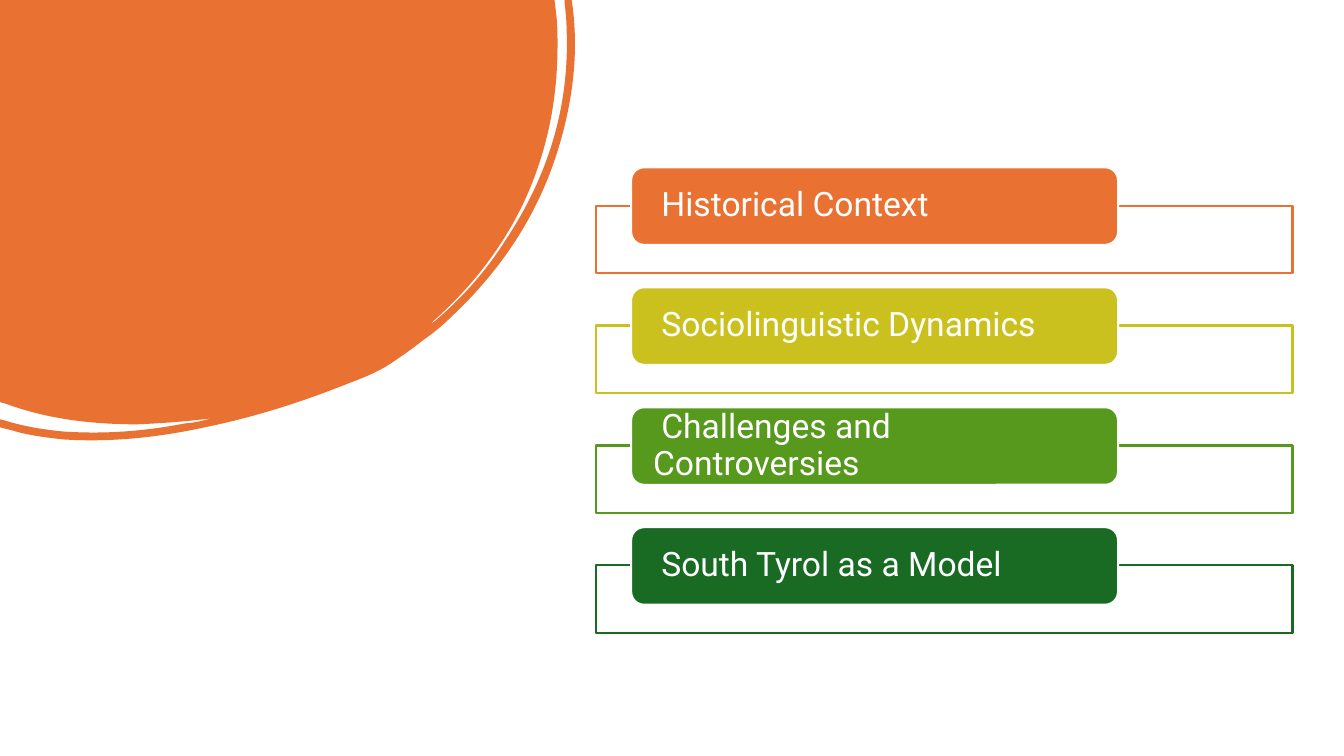
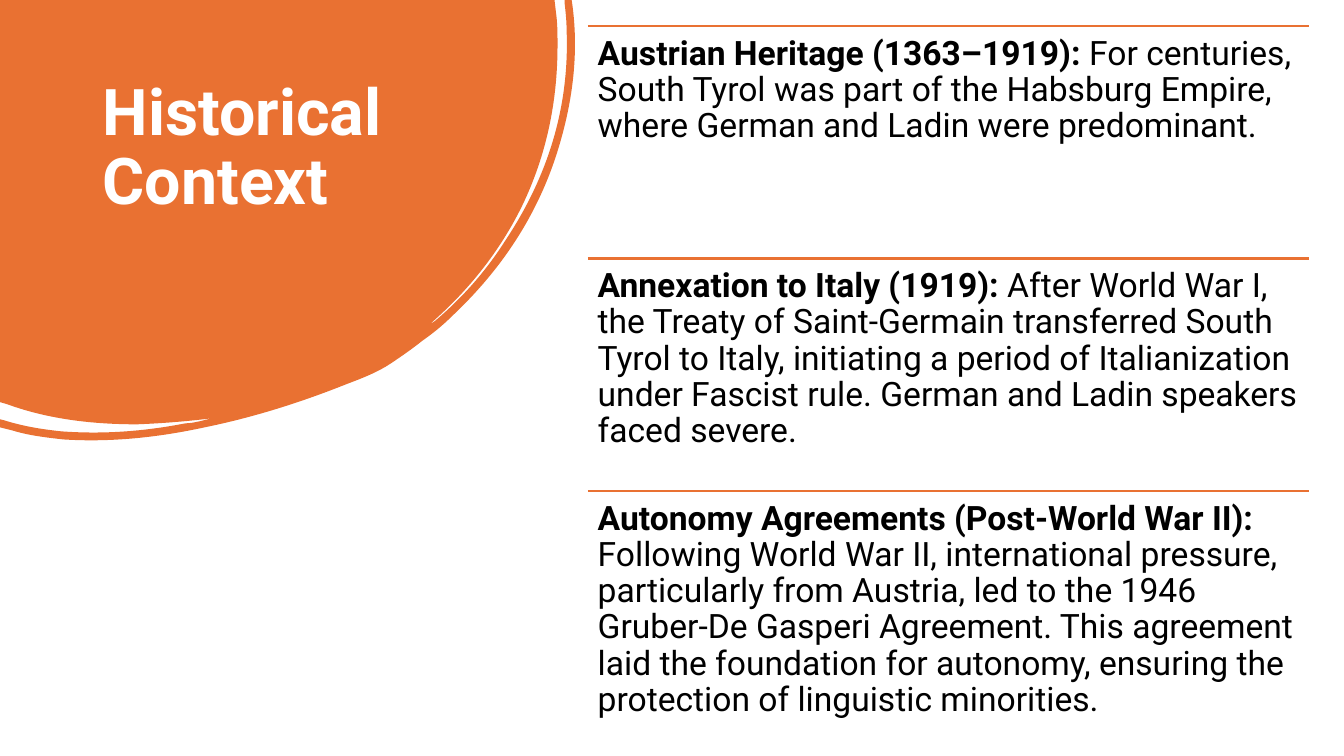
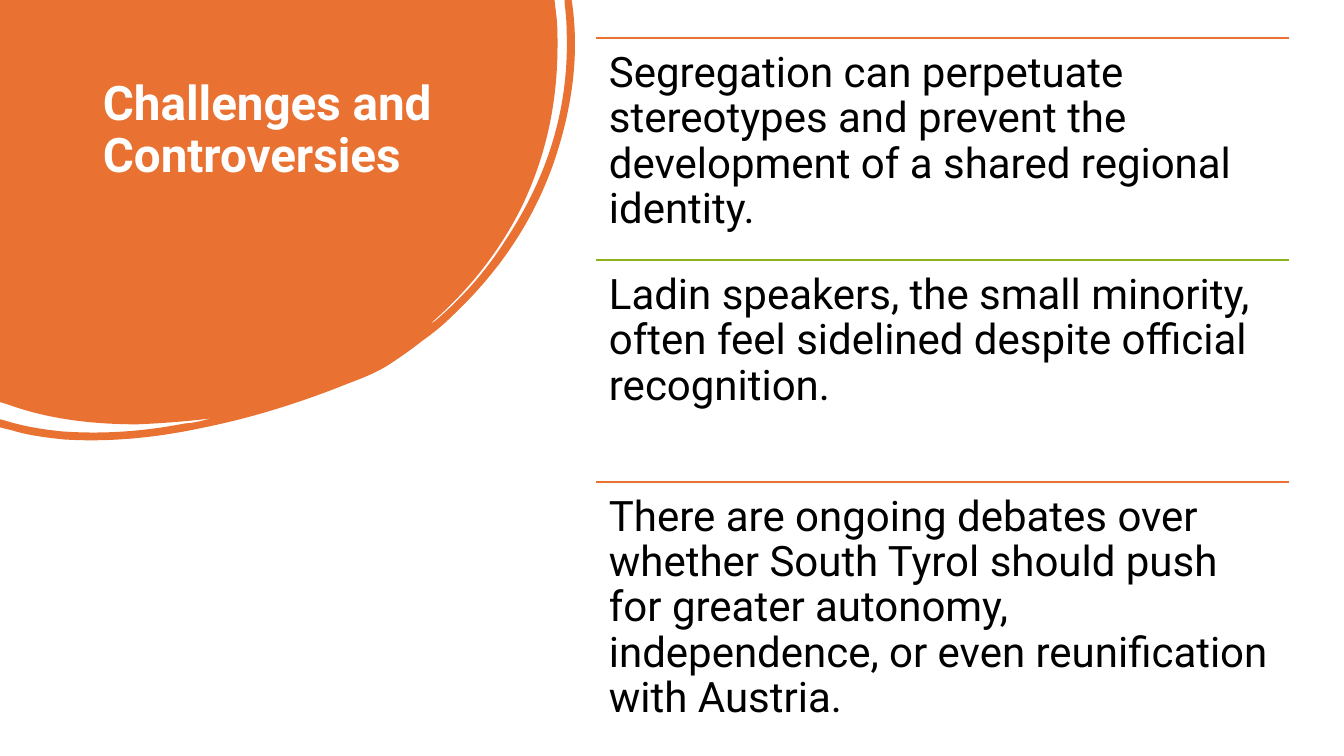
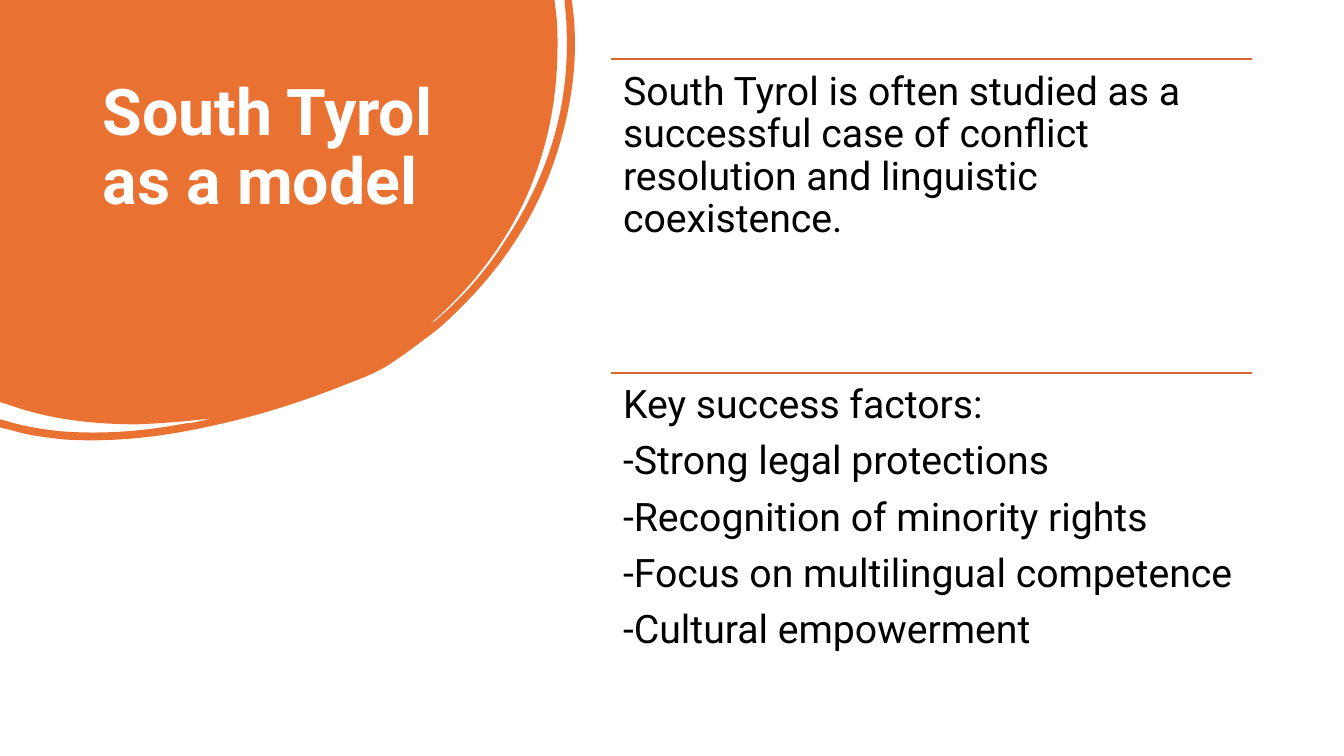
from lxml.etree import SubElement
from pptx import Presentation
from pptx.dml.color import RGBColor
from pptx.enum.shapes import MSO_CONNECTOR, MSO_SHAPE
from pptx.enum.text import MSO_ANCHOR, MSO_AUTO_SIZE, PP_ALIGN
from pptx.oxml.ns import qn
from pptx.util import Inches, Pt

COLORS = {
    "orange": "E97132",
    "yellow": "CBC11E",
    "lime": "8EB21E",
    "green": "56991D",
    "forest": "196B24",
    "rust": "D3672D",
    "white": "FFFFFF",
    "black": "000000",
}
FONT = "Roboto"
RULE_WIDTH = Pt(1.5)
TITLE_ONLY, BLANK = 5, 6

BLOB_WIDTH, BLOB_HEIGHT = Inches(5.71), Inches(4.37)
BLOB_OUTLINE = [
    (5.5, 0), (5.52, 0.17),
    (5.53, 0.26, 5.53, 0.36, 5.53, 0.45), (5.53, 1.01, 5.42, 1.54, 5.18, 2.04),
    (4.96, 2.49, 4.65, 2.88, 4.27, 3.21), (4.29, 3.21, 4.3, 3.19, 4.32, 3.18),
    (4.59, 2.95, 4.82, 2.69, 5.01, 2.39), (5.43, 1.76, 5.65, 1.07, 5.62, 0.3),
    (5.62, 0.21, 5.61, 0.12, 5.6, 0.03), (5.6, 0), (5.67, 0), (5.68, 0.07),
    (5.74, 0.54, 5.68, 1.02, 5.53, 1.5), (5.33, 2.14, 4.97, 2.68, 4.48, 3.14),
    (4.39, 3.23, 4.29, 3.31, 4.19, 3.38), (4.09, 3.46, 3.99, 3.53, 3.87, 3.61),
    (3.75, 3.69, 3.6, 3.75, 3.44, 3.81), (2.99, 3.99, 2.52, 4.14, 2.03, 4.24),
    (1.57, 4.34, 1.1, 4.39, 0.63, 4.36), (0.45, 4.34, 0.28, 4.32, 0.12, 4.27),
    (0, 4.24), (0, 4.16), (0.04, 4.17),
    (0.23, 4.23, 0.42, 4.26, 0.61, 4.28), (1.03, 4.31, 1.43, 4.28, 1.84, 4.2),
    (1.89, 4.2, 1.93, 4.19, 1.98, 4.18), (2.02, 4.17, 2.06, 4.16, 2.1, 4.15),
    (1.86, 4.18, 1.61, 4.2, 1.36, 4.21), (0.92, 4.21, 0.48, 4.16, 0.07, 4.01),
    (0, 3.99),
]

TOPICS = [
    (" Historical Context", "orange"),
    (" Sociolinguistic Dynamics", "yellow"),
    (" Challenges and Controversies", "green"),
    (" South Tyrol as a Model", "forest"),
]

SECTIONS = [
    {
        "title": "Historical Context", "title_size": 46, "size": 24,
        "left": 5.83, "top": 0.26, "last_top": 4.87, "width": 7.15, "inset": 0.1,
        "rules": ["orange", "orange", "orange"],
        "entries": [
            [[("Austrian Heritage (1363–1919):", True),
              (" For centuries, South Tyrol was part of the Habsburg Empire, where German "
               "and Ladin were predominant.", False)]],
            [[("Annexation to Italy (1919):", True),
              (" After World War I, the Treaty of Saint-Germain transferred South Tyrol to "
               "Italy, initiating a period of Italianization under Fascist rule. German and "
               "Ladin speakers faced severe.", False)]],
            [[("Autonomy Agreements (Post-World War II):", True),
              (" Following World War II, international pressure, particularly from Austria, "
               "led to the 1946 Gruber-De Gasperi Agreement. This agreement laid the "
               "foundation for autonomy, ensuring the protection of linguistic minorities.",
               False)]],
        ],
    },
    {
        "title": "Challenges and Controversies", "title_size": 34, "size": 30,
        "left": 5.91, "top": 0.38, "last_top": 4.78, "width": 6.87, "inset": 0.13,
        "rules": ["orange", "lime", "orange"],
        "entries": [
            ["Segregation can perpetuate stereotypes and prevent the development of a shared "
             "regional identity."],
            ["Ladin speakers, the small minority, often feel sidelined despite official "
             "recognition."],
            ["There are ongoing debates over whether South Tyrol should push for greater "
             "autonomy, independence, or even reunification with Austria."],
        ],
    },
    {
        "title": "South Tyrol as a model", "title_size": 46, "size": 28,
        "left": 6.06, "top": 0.59, "last_top": 3.7, "width": 6.36, "inset": 0.12,
        "rules": ["rust", "rust"],
        "entries": [
            ["South Tyrol is often studied as a successful case of conflict resolution and "
             "linguistic coexistence."],
            ["Key success factors:", "-Strong legal protections",
             "-Recognition of minority rights", "-Focus on multilingual competence",
             "-Cultural empowerment"],
        ],
    },
]


def rgb(name):
    return RGBColor.from_string(COLORS[name])


def write(frame, paragraphs, size, color="black", bold=False, anchor=MSO_ANCHOR.TOP,
          insets=(0.1, 0.05), space_after=0):
    frame.word_wrap = True
    frame.auto_size = MSO_AUTO_SIZE.NONE
    frame.vertical_anchor = anchor
    frame.margin_left = frame.margin_right = Inches(insets[0])
    frame.margin_top = frame.margin_bottom = Inches(insets[1])
    for number, content in enumerate(paragraphs):
        paragraph = frame.add_paragraph() if number else frame.paragraphs[0]
        paragraph.alignment = PP_ALIGN.LEFT
        paragraph.line_spacing = 0.9
        paragraph.space_before = Pt(0)
        paragraph.space_after = Pt(space_after)
        pieces = [(content, bold)] if isinstance(content, str) else content
        for words, heavy in pieces:
            run = paragraph.add_run()
            run.text = words
            run.font.name = FONT
            run.font.size = Pt(size)
            run.font.bold = heavy
            run.font.color.rgb = rgb(color)


deck = Presentation()
deck.slide_width = Inches(13.33)
deck.slide_height = Inches(7.5)

for layout in [BLANK] + [TITLE_ONLY] * len(SECTIONS):
    slide = deck.slides.add_slide(deck.slide_layouts[layout])
    outline = slide.shapes.build_freeform(0, 0)
    outline.add_line_segments(
        [(Inches(segment[-2]), Inches(segment[-1])) for segment in BLOB_OUTLINE], close=True)
    blob = outline.convert_to_shape()
    blob.shadow.inherit = False
    blob.fill.solid()
    blob.fill.fore_color.rgb = rgb("orange")
    blob.line.fill.background()
    blob.width, blob.height = BLOB_WIDTH, BLOB_HEIGHT

    contour = next(blob._element.iter(qn("a:path")))
    contour.set("w", str(BLOB_WIDTH))
    contour.set("h", str(BLOB_HEIGHT))
    for side, segment in zip(contour.findall(qn("a:lnTo")), BLOB_OUTLINE):
        if len(segment) == 6:
            curve = SubElement(contour, qn("a:cubicBezTo"))
            for x, y in zip(segment[::2], segment[1::2]):
                SubElement(curve, qn("a:pt"), x=str(Inches(x)), y=str(Inches(y)))
            contour.replace(side, curve)
    blob._element.getparent().insert(2, blob._element)

agenda, *section_slides = deck.slides

for row, (topic, color) in enumerate(TOPICS):
    top = 1.66 + row * 1.19
    frame_box = agenda.shapes.add_shape(
        MSO_SHAPE.RECTANGLE, Inches(5.91), Inches(top + 0.38), Inches(6.91), Inches(0.67))
    label = agenda.shapes.add_shape(
        MSO_SHAPE.ROUNDED_RECTANGLE, Inches(6.26), Inches(top), Inches(4.83), Inches(0.77))
    for box, fill, line in [(frame_box, "white", color), (label, color, "white")]:
        box.shadow.inherit = False
        box.fill.solid()
        box.fill.fore_color.rgb = rgb(fill)
        box.line.color.rgb = rgb(line)
        box.line.width = RULE_WIDTH
    write(label.text_frame, [topic], size=24, color="white", anchor=MSO_ANCHOR.MIDDLE,
          insets=(0.18, 0))

for slide, section in zip(section_slides, SECTIONS):
    title = slide.shapes.title
    title.left, title.top = Inches(0.92), Inches(0.74)
    title.width, title.height = Inches(3.52), Inches(2.22)
    write(title.text_frame, [section["title"]], size=section["title_size"],
          color="white", bold=True)

    left, width = Inches(section["left"]), Inches(section["width"])
    pitch = (section["last_top"] - section["top"]) / (len(section["entries"]) - 1)
    for row, (color, entry) in enumerate(zip(section["rules"], section["entries"])):
        top = Inches(section["top"] + row * pitch)
        rule = slide.shapes.add_connector(
            MSO_CONNECTOR.STRAIGHT, left, top, left + width, top)
        rule.line.color.rgb = rgb(color)
        rule.line.width = RULE_WIDTH
        SubElement(rule._element.spPr, qn("a:effectLst"))
        passage = slide.shapes.add_textbox(left, top, width, Inches(pitch))
        write(passage.text_frame, entry, size=section["size"],
              insets=(section["inset"], section["inset"]),
              space_after=section["size"] * 0.35)

deck.save("out.pptx")
